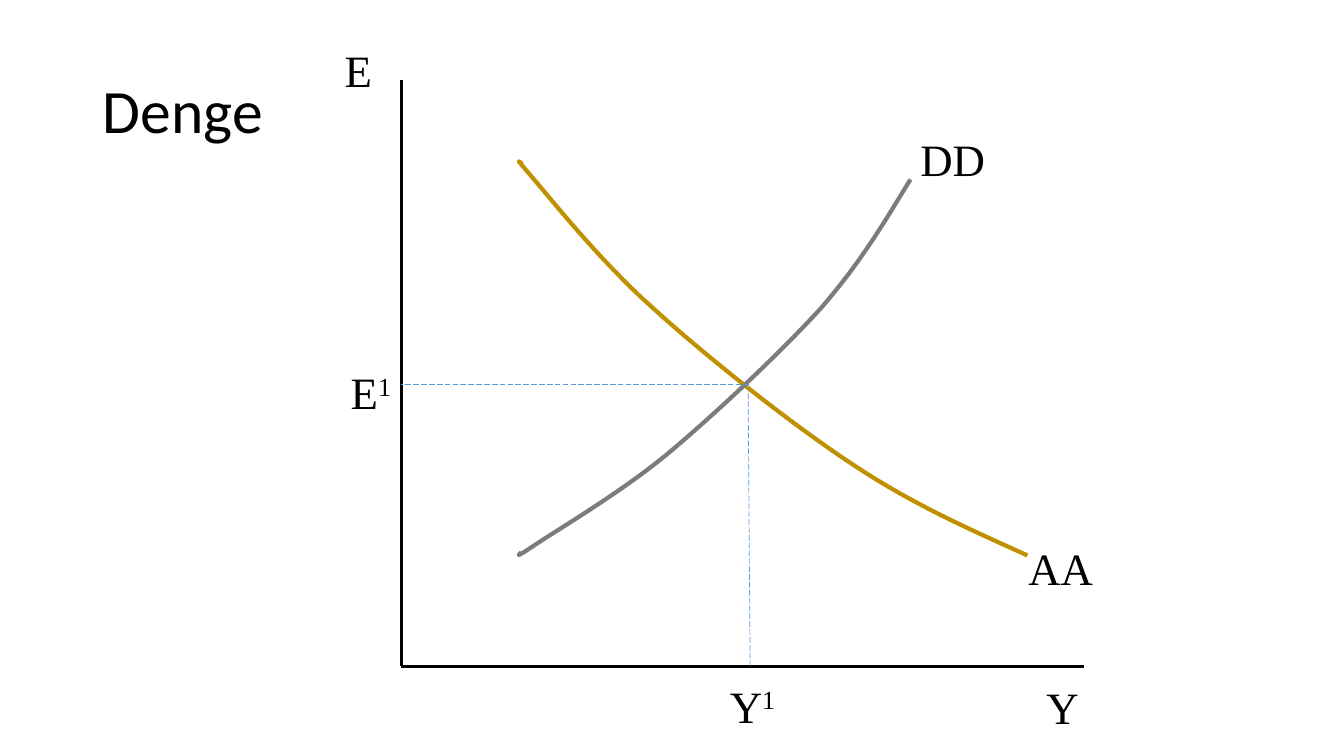
from lxml.etree import SubElement
from pptx import Presentation
from pptx.dml.color import RGBColor
from pptx.enum.dml import MSO_LINE_DASH_STYLE as Dash
from pptx.enum.shapes import MSO_CONNECTOR as Conn
from pptx.enum.text import MSO_ANCHOR as Anchor, MSO_AUTO_SIZE as Fit
from pptx.oxml.ns import qn
from pptx.util import Inches, Pt

COLORS = {"ink": "000000", "gold": "BF9000", "gray": "7C7C7C", "blue": "5B9BD5"}
LEFT, TOP, BASE, RIGHT = 3.98, 0.79, 6.61, 10.75
EQ_X, EQ_Y = 7.43, 3.81

# Each curve is a start point followed by cubic segments (two controls, one end).
AA = [(5.18, 1.63),
      (5.09, 1.54), (5.22, 1.69), (5.22, 1.69),
      (5.43, 1.93), (5.93, 2.57), (6.48, 3.06),
      (7.02, 3.55), (7.84, 4.2), (8.46, 4.61),
      (9.08, 5.02), (9.64, 5.26), (10.19, 5.51)]
DD = [(5.17, 5.48),
      (5.09, 5.55), (5.24, 5.45), (5.24, 5.45),
      (5.47, 5.29), (6.11, 4.92), (6.6, 4.52),
      (7.08, 4.12), (7.73, 3.51), (8.14, 3.06),
      (8.54, 2.6), (8.78, 2.19), (9.03, 1.78)]


def color(name):
    return RGBColor.from_string(COLORS[name])


def trace(nodes, steps=16):
    """Return points along a chain of cubic Bezier segments."""
    points = [nodes[0]]
    for i in range(0, len(nodes) - 1, 3):
        a, b, c, d = nodes[i:i + 4]
        for n in range(1, steps + 1):
            t = n / steps
            u = 1 - t
            points.append(tuple(
                u**3 * p + 3 * u**2 * t * q + 3 * u * t**2 * r + t**3 * s
                for p, q, r, s in zip(a, b, c, d)))
    return [(Inches(x), Inches(y)) for x, y in points]


class Board:
    def __init__(self, slide, font="Times New Roman", size=32):
        self.shapes = slide.shapes
        self.font = font
        self.size = size

    def stroke(self, line, tone, width):
        line.color.rgb = color(tone)
        line.width = Pt(width)

    def text(self, words, x, y, w, h, *, sup="", font=None, size=None,
             wrap=False, anchor=Anchor.TOP, pitch=None):
        """Add a text box; sup is set as a superscript after the words."""
        box = self.shapes.add_textbox(Inches(x), Inches(y), Inches(w), Inches(h))
        frame = box.text_frame
        frame.word_wrap = wrap
        frame.auto_size = Fit.NONE if wrap else Fit.SHAPE_TO_FIT_TEXT
        frame.vertical_anchor = anchor
        para = frame.paragraphs[0]
        para.line_spacing = pitch
        for part in filter(None, (words, sup)):
            run = para.add_run()
            run.text = part
            run.font.name = font or self.font
            run.font.size = Pt(size or self.size)
            run.font.color.rgb = color("ink")
        if sup:
            run.font._element.set("baseline", "30000")

    def line(self, x1, y1, x2, y2, tone="ink", width=2.25, dash=None):
        link = self.shapes.add_connector(
            Conn.STRAIGHT, Inches(x1), Inches(y1), Inches(x2), Inches(y2))
        self.stroke(link.line, tone, width)
        if dash:
            link.line.dash_style = dash
        SubElement(link._element.spPr, qn("a:effectLst"))

    def curve(self, nodes, tone, width=3):
        first, *rest = trace(nodes)
        path = self.shapes.build_freeform(*first)
        path.add_line_segments(rest, close=False)
        shape = path.convert_to_shape()
        shape.shadow.inherit = False
        shape.fill.background()
        self.stroke(shape.line, tone, width)


def main():
    deck = Presentation()
    deck.slide_width, deck.slide_height = Inches(13.33), Inches(7.5)
    board = Board(deck.slides.add_slide(deck.slide_layouts[6]))

    board.text("Denge", 0.92, 0.4, 11.5, 1.45, font="Calibri", size=44,
               wrap=True, anchor=Anchor.MIDDLE, pitch=0.9)
    board.line(LEFT, TOP, LEFT, BASE)
    board.line(LEFT, BASE, RIGHT, BASE)
    board.curve(AA, "gold")
    board.curve(DD, "gray")
    guide = dict(tone="blue", width=0.5, dash=Dash.LONG_DASH)
    board.line(EQ_X + 0.01, BASE, EQ_X - 0.01, EQ_Y, **guide)
    board.line(EQ_X, EQ_Y, LEFT, EQ_Y, **guide)

    for words, sup, x, y, w in [
        ("E", "", 3.32, 0.37, 0.48),
        ("Y", "", 10.28, 6.69, 0.52),
        ("DD", "", 9.03, 1.26, 0.85),
        ("AA", "", 10.1, 5.32, 0.85),
        ("Y", "1", 7.14, 6.68, 0.68),
        ("E", "1", 3.38, 3.57, 0.62),
    ]:
        board.text(words, x, y, w, 0.64, sup=sup)

    deck.save("out.pptx")


if __name__ == "__main__":
    main()
